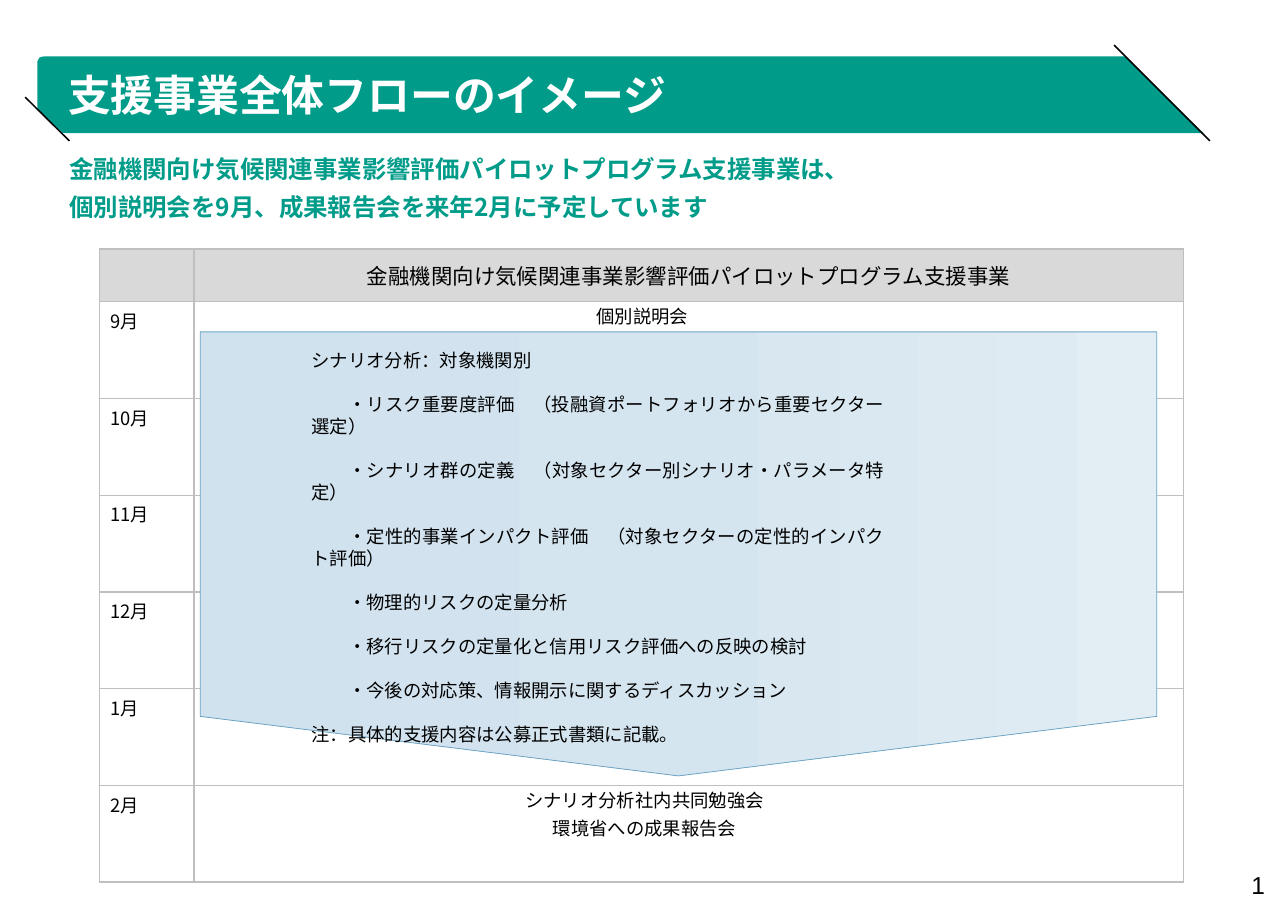
from copy import deepcopy
from dataclasses import dataclass

from lxml.etree import SubElement
from pptx import Presentation
from pptx.dml.color import RGBColor
from pptx.enum.shapes import MSO_CONNECTOR, MSO_SHAPE
from pptx.enum.text import MSO_ANCHOR, PP_ALIGN
from pptx.oxml.ns import qn
from pptx.util import Cm, Pt

JAPANESE_FONT = "Noto Sans CJK JP"
GREEN, BLACK, WHITE = "009C89", "000000", "FFFFFF"
HEADER_GREY, BORDER_GREY, ARROW_BLUE = "D9D9D9", "BFBFBF", "6CA4C5"
ARROW_STOPS = [(0, "E2EDF4"), (0.5, "D5E5EF"), (1, "CFE2EE")]

BANNER_OUTLINE = [(1.04, 1.3), (25.93, 1.3), (27.74, 3.07), (1.45, 3.07), (0.99, 2.64),
                  (0.86, 2.54), (0.86, 1.42), (0.91, 1.33), (0.96, 1.31)]
BANNER_STROKES = [(25.68, 1.04, 27.89, 3.25), (0.58, 2.24, 1.6, 3.25)]

PROGRAM = "金融機関向け気候関連事業影響評価パイロットプログラム支援事業"
MONTHS = ["9月", "10月", "11月", "12月", "1月", "2月"]
COLUMN_WIDTHS = [2.18, 22.81]
HEADER_HEIGHT, MONTH_HEIGHT = 1.22, 2.23


@dataclass
class TextBlock:
    """A text box with its place in centimetres and its format in points."""
    place: tuple[float, float, float, float]
    lines: list[str]
    size: float = 12
    color: str = BLACK
    font: str = JAPANESE_FONT
    bold: bool = False
    align: PP_ALIGN = PP_ALIGN.LEFT
    anchor: MSO_ANCHOR = MSO_ANCHOR.TOP
    insets: tuple[float, float, float, float] = (0.25, 0.13, 0.25, 0.13)
    spacing: float = Pt(14.4)
    after: float = 0
    wrap: bool = True


BLOCKS = [
    TextBlock((28.68, 20.14, 0.64, 0.53), ["1"], size=16, font="Arial", align=PP_ALIGN.CENTER,
              anchor=MSO_ANCHOR.MIDDLE, insets=(0, 0, 0, 0), spacing=1.0, wrap=False),
    TextBlock((0.86, 1.3, 24.79, 1.8), ["支援事業全体フローのイメージ"], size=28, color=WHITE,
              bold=True, anchor=MSO_ANCHOR.MIDDLE, insets=(0.71, 0.1, 0, 0), spacing=0.9),
    TextBlock((1.6, 3.1, 26.11, 2.39),
              [PROGRAM + "は、", "個別説明会を9月、成果報告会を来年2月に予定しています"],
              size=16, color=GREEN, bold=True, insets=(0, 0.45, 0, 0), spacing=Pt(19), after=6),
    TextBlock((6.93, 7.92, 13.72, 7.95),
              ["シナリオ分析：対象機関別",
               "・リスク重要度評価　（投融資ポートフォリオから重要セクター選定）",
               "・シナリオ群の定義　（対象セクター別シナリオ・パラメータ特定）",
               "・定性的事業インパクト評価　（対象セクターの定性的インパクト評価）",
               "・物理的リスクの定量分析",
               "・移行リスクの定量化と信用リスク評価への反映の検討",
               "・今後の対応策、情報開示に関するディスカッション",
               "注：具体的支援内容は公募正式書類に記載。"],
              align=PP_ALIGN.JUSTIFY, after=14.4),
    TextBlock((9.4, 6.91, 10.82, 0.76), ["個別説明会"], align=PP_ALIGN.CENTER),
    TextBlock((9.45, 18.08, 10.82, 1.42), ["シナリオ分析社内共同勉強会", "環境省への成果報告会"],
              align=PP_ALIGN.CENTER, after=3.6),
]


def rgb(value: str) -> RGBColor:
    """Turn a hex string into a colour."""
    return RGBColor.from_string(value)


def format_spans(para, size: float, color: str, font: str, bold: bool = False) -> None:
    """Set the font of every run, for Latin and East Asian text alike."""
    for span in para.runs:
        span.font.size, span.font.bold, span.font.name = Pt(size), bold, font
        span.font.color.rgb = rgb(color)
        SubElement(span.font._element, qn("a:ea"), typeface=font)


def add_block(page, block: TextBlock) -> None:
    """Draw one text block."""
    frame = page.shapes.add_textbox(*map(Cm, block.place)).text_frame
    frame.word_wrap, frame.vertical_anchor = block.wrap, block.anchor
    frame.margin_left, frame.margin_top, frame.margin_right, frame.margin_bottom = map(
        Cm, block.insets)
    frame.text = "\n".join(block.lines)
    for para in frame.paragraphs:
        para.alignment, para.line_spacing = block.align, block.spacing
        para.space_after = Pt(block.after)
        if para.text.startswith("・"):
            para._p.get_or_add_pPr().set("indent", str(Pt(2 * block.size)))
        format_spans(para, block.size, block.color, block.font, block.bold)


def add_banner(page) -> None:
    """Draw the green title banner and its two slanted strokes."""
    points = [(Cm(x), Cm(y)) for x, y in BANNER_OUTLINE]
    builder = page.shapes.build_freeform(*points[0])
    builder.add_line_segments(points[1:])
    banner = builder.convert_to_shape()
    banner.shadow.inherit = False
    banner.fill.solid()
    banner.fill.fore_color.rgb = rgb(GREEN)
    banner.line.fill.background()
    for ends in BANNER_STROKES:
        stroke = page.shapes.add_connector(MSO_CONNECTOR.STRAIGHT, *map(Cm, ends))
        stroke.line.color.rgb = rgb(BLACK)
        stroke.line.width = Pt(1)
        SubElement(stroke._element.spPr, qn("a:effectLst"))


def format_cell(cell, fill: str | None) -> None:
    """Give a cell its fill and thin grey borders."""
    properties = cell._tc.get_or_add_tcPr()
    for side in ("a:lnL", "a:lnR", "a:lnT", "a:lnB"):
        border = SubElement(properties, qn(side), w=str(Pt(1)))
        SubElement(SubElement(border, qn("a:solidFill")), qn("a:srgbClr"), val=BORDER_GREY)
    if fill:
        cell.fill.solid()
        cell.fill.fore_color.rgb = rgb(fill)
    else:
        cell.fill.background()


def add_schedule(page) -> None:
    """Draw the monthly schedule table."""
    heights = [HEADER_HEIGHT] + [MONTH_HEIGHT] * len(MONTHS)
    table = page.shapes.add_table(len(heights), len(COLUMN_WIDTHS), Cm(2.29), Cm(5.74),
                                  Cm(sum(COLUMN_WIDTHS)), Cm(sum(heights))).table
    for column, width in zip(table.columns, COLUMN_WIDTHS):
        column.width = Cm(width)
    for index, (row, height) in enumerate(zip(table.rows, heights)):
        row.height = Cm(height)
        for cell in row.cells:
            format_cell(cell, None if index else HEADER_GREY)
    header = table.cell(0, 1)
    header.text_frame.text = PROGRAM
    header.vertical_anchor = MSO_ANCHOR.MIDDLE
    header.text_frame.paragraphs[0].alignment = PP_ALIGN.CENTER
    format_spans(header.text_frame.paragraphs[0], 14, BLACK, JAPANESE_FONT)
    for index, month in enumerate(MONTHS, start=1):
        frame = table.cell(index, 0).text_frame
        frame.text = month
        format_spans(frame.paragraphs[0], 12, BLACK, JAPANESE_FONT)


def add_period_arrow(page) -> None:
    """Draw the downward arrow that spans the analysis period."""
    arrow = page.shapes.add_shape(MSO_SHAPE.PENTAGON, Cm(10.52), Cm(1.75), Cm(10.24), Cm(22.05))
    arrow.rotation = 90
    arrow.adjustments[0] = 0.134
    arrow.shadow.inherit = False
    arrow.line.color.rgb = rgb(ARROW_BLUE)
    arrow.line.width = Pt(0.5)
    arrow.fill.gradient()
    arrow.fill.gradient_angle = 270
    stop_list = arrow._element.spPr.find(".//" + qn("a:gsLst"))
    stop_list.append(deepcopy(stop_list[-1]))
    for stop, (position, color) in zip(arrow.fill.gradient_stops, ARROW_STOPS):
        stop.position = position
        stop.color.rgb = rgb(color)


def main() -> None:
    """Build the slide and save it."""
    deck = Presentation()
    deck.slide_width, deck.slide_height = Cm(29.69), Cm(21.01)
    page = deck.slides.add_slide(deck.slide_layouts[6])
    add_banner(page)
    add_schedule(page)
    add_period_arrow(page)
    for block in BLOCKS:
        add_block(page, block)
    deck.save("out.pptx")


if __name__ == "__main__":
    main()
